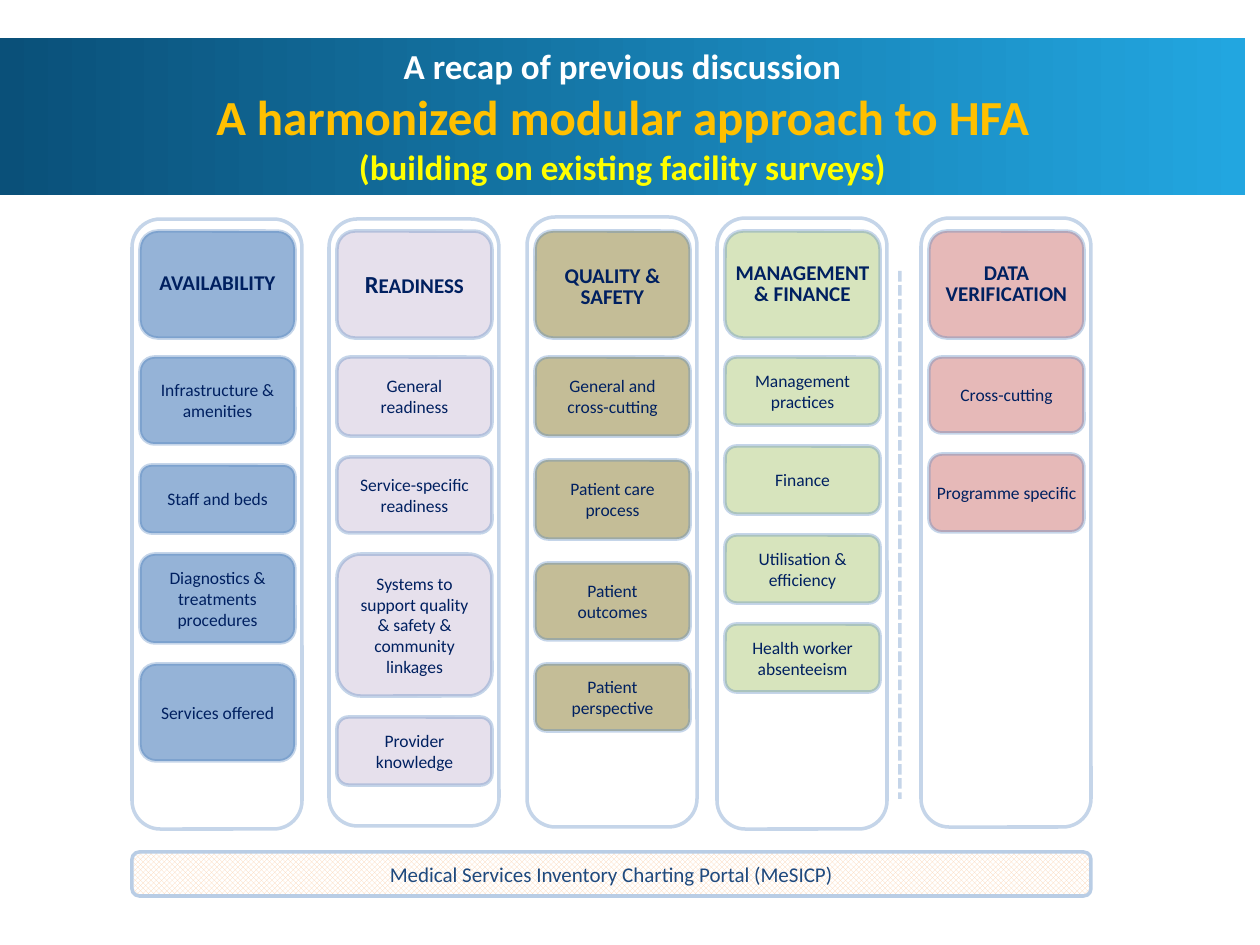
from lxml import etree
from pptx import Presentation
from pptx.dml.color import RGBColor
from pptx.enum.dml import MSO_LINE, MSO_PATTERN
from pptx.enum.shapes import MSO_CONNECTOR, MSO_SHAPE
from pptx.enum.text import MSO_ANCHOR, MSO_AUTO_SIZE, PP_ALIGN
from pptx.oxml.ns import qn
from pptx.util import Pt

PX = 914400 / 126
ROUND = MSO_SHAPE.ROUNDED_RECTANGLE
LINE = MSO_CONNECTOR.STRAIGHT
DASH = MSO_LINE.SQUARE_DOT
TRELLIS = MSO_PATTERN.TRELLIS
MID, TOP = MSO_ANCHOR.MIDDLE, MSO_ANCHOR.TOP
CENTER = PP_ALIGN.CENTER
GROW = MSO_AUTO_SIZE.SHAPE_TO_FIT_TEXT
hue = RGBColor.from_string


def write(para, text, size, color, bold=False):
    para.alignment = CENTER
    run = para.add_run()
    run.text = text
    font = run.font
    font.name, font.size, font.bold = "Calibri", Pt(size), bold
    font.color.rgb = hue(color)


def card(x, y, w, h, fill=None, edge="4F81BD", clear=True):
    """Rounded box; a clear edge is one third opaque."""
    box = slide.shapes.add_shape(ROUND, *[round(v * PX) for v in (x, y, w, h)])
    box.shadow.inherit = False
    if fill:
        box.fill.solid()
        box.fill.fore_color.rgb = hue(fill)
    else:
        box.fill.background()
    box.line.width = Pt(2)
    box.line.color.rgb = hue(edge)
    if clear:
        tint = box.line._ln.find(".//" + qn("a:srgbClr"))
        etree.SubElement(tint, qn("a:alpha"), val="33000")
    box.text_frame.word_wrap = True
    box.text_frame.vertical_anchor = MID
    return box


prs = Presentation()
prs.slide_width, prs.slide_height = round(1260 * PX), round(945 * PX)
slide = prs.slides.add_slide(prs.slide_layouts[5])

# Title banner
title = slide.shapes.title
title.left, title.top = 0, round(38 * PX)
title.width, title.height = round(1245 * PX), round(157 * PX)
title.fill.gradient()
title.fill.gradient_angle = 0
for stop, color in zip(title.fill.gradient_stops, ("0A5079", "22A6E0")):
    stop.color.rgb = hue(color)
frame = title.text_frame
frame.vertical_anchor, frame.auto_size = TOP, GROW
lines = [
    ("A recap of previous discussion", 20, "FFFFFF"),
    ("A harmonized modular approach to HFA", 28, "FFC000"),
    ("(building on existing facility surveys)", 20, "FFFF00"),
]
for i, (text, size, color) in enumerate(lines):
    para = frame.add_paragraph() if i else frame.paragraphs[0]
    write(para, text, size, color, True)

# Bottom bar
bar = card(132, 852, 959, 44, "FFFFFF", "B9CDE5", False)
bar.fill.patterned()
bar.fill.pattern = TRELLIS
bar.fill.fore_color.rgb = hue("FCD5B5")
bar.fill.back_color.rgb = hue("FFFFFF")
write(bar.text_frame.paragraphs[0],
      "Medical Services Inventory Charting Portal (MeSICP)", 12, "1F497D")

# Dashed divider
rule = slide.shapes.add_connector(
    LINE, *[round(v * PX) for v in (900, 271, 900, 799)])
rule.line.width, rule.line.dash_style = Pt(2), DASH
rule.line.color.rgb = hue("4F81BD")
tint = rule.line._ln.find(".//" + qn("a:srgbClr"))
etree.SubElement(tint, qn("a:alpha"), val="33000")
etree.SubElement(rule._element.spPr, qn("a:effectLst"))

# Columns: left, top, height, fill, gap, space after, heading runs, boxes
cols = [
    (132, 219, 610, "95B3D7", 21, 12, [("AVAILABILITY", 12)],
     [("Infrastructure & amenities", 87), ("Staff and beds", 68),
      ("Diagnostics & treatments procedures", 89), ("Services offered", 97)]),
    (329, 219, 607, "E6E0EC", 21, 12, [("R", 14), ("EADINESS", 12)],
     [("General readiness", 79), ("Service-specific readiness", 76),
      ("Systems to support quality & safety & community linkages", 142),
      ("Provider knowledge", 68)]),
    (527, 217, 610, "C4BD97", 24, 0, [("QUALITY & SAFETY", 12)],
     [("General and cross-cutting", 79), ("Patient care process", 79),
      ("Patient outcomes", 77), ("Patient perspective", 67)]),
    (717, 218, 611, "D7E4BD", 21, 12, [("MANAGEMENT & FINANCE", 12)],
     [("Management practices", 68), ("Finance", 68),
      ("Utilisation & efficiency", 68), ("Health worker absenteeism", 68)]),
    (921, 218, 609, "E6B9B8", 21, 12, [("DATA VERIFICATION", 12)],
     [("Cross-cutting", 76), ("Programme specific", 78)]),
]
tight = ("AVAILABILITY", "MANAGEMENT & FINANCE", "DATA VERIFICATION",
         "Infrastructure & amenities", "Programme specific")
for left, top, tall, fill, gap, after, head, items in cols:
    card(left, top, 170, tall)
    rows = [(head, 231, 107, True)]
    y = 357
    for text, h in items:
        rows.append(([(text, 10)], y, h, False))
        y += h + gap
    for runs, y, h, bold in rows:
        frame = card(left + 8, y, 155, h, fill).text_frame
        if runs[0][0] in tight:
            frame.margin_left = frame.margin_right = 0
            frame.margin_top = frame.margin_bottom = 0
        elif bold:
            frame.margin_bottom = 0
        para = frame.paragraphs[0]
        para.line_spacing, para.space_before = Pt(12), Pt(9)
        para.space_after = Pt(12 if bold else after)
        for text, size in runs:
            write(para, text, size, "002060", bold)

prs.save("out.pptx")
